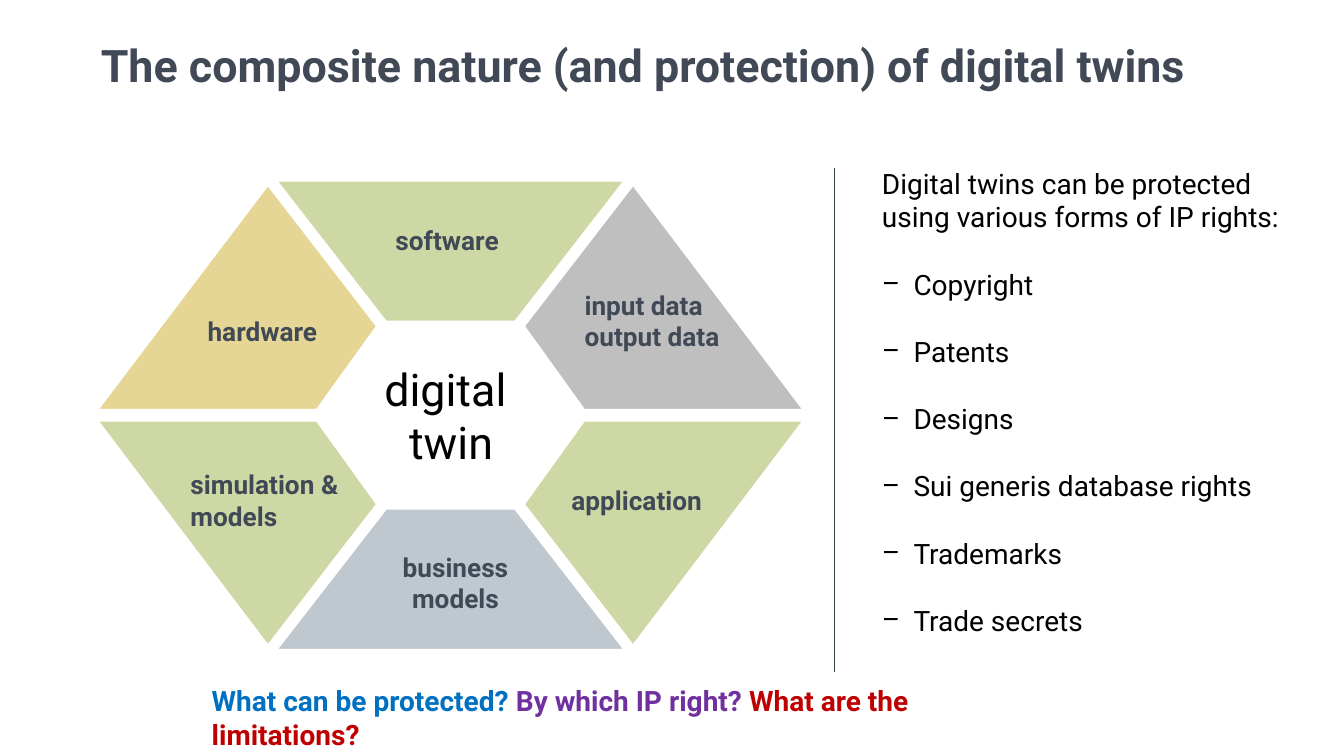
from dataclasses import dataclass

from lxml.etree import SubElement
from pptx import Presentation
from pptx.dml.color import RGBColor
from pptx.enum.shapes import MSO_CONNECTOR, MSO_SHAPE
from pptx.enum.text import MSO_ANCHOR, MSO_AUTO_SIZE, PP_ALIGN
from pptx.oxml.ns import qn
from pptx.util import Pt

FONT = "Roboto"
SLATE, BLACK, WHITE = "404955", "000000", "FFFFFF"
GREEN, SAND, GREY, STEEL = "CED8A4", "E6D695", "BFBFBF", "BFC8CE"
CENTRE_X, CENTRE_Y = 321.8, 296.6

# Outlines of the lower and lower-right segments, measured from the centre
TRAPEZOID = [(-46, 67), (46, 67), (124, 167.4), (-124, 167.4)]
WEDGE = [(95.6, 4), (52.7, 63.6), (130.4, 164.2), (251.8, 4)]


@dataclass
class Segment:
    lines: list[str]
    outline: list[tuple[float, float]]
    mirror: tuple[int, int]
    fill: str
    label_box: tuple[float, float, float, float]
    align: PP_ALIGN = PP_ALIGN.LEFT


@dataclass
class Question:
    text: str
    color: str


SEGMENTS = [
    Segment(["business", "models"], TRAPEZOID, (1, 1), STEEL,
            (271.4, 388.1, 108, 56.2), PP_ALIGN.CENTER),
    Segment(["software"], TRAPEZOID, (1, -1), GREEN,
            (236.9, 148.3, 164.9, 46.1), PP_ALIGN.CENTER),
    Segment(["hardware"], WEDGE, (-1, -1), SAND, (148.3, 191.5, 108, 89.3)),
    Segment(["simulation &", "models"], WEDGE, (-1, 1), GREEN,
            (136.1, 312.5, 126.7, 89.3)),
    Segment(["input data", "output data"], WEDGE, (1, -1), GREY,
            (417.6, 184.3, 108, 89.3)),
    Segment(["application"], WEDGE, (1, 1), GREEN, (408.2, 312.5, 126.7, 89.3)),
]
IP_RIGHTS = ["Copyright", "Patents", "Designs", "Sui generis database rights",
             "Trademarks", "Trade secrets"]
QUESTIONS = [
    Question("What can be protected? ", "0070C0"),
    Question("By which IP right? ", "7030A0"),
    Question("What are the limitations?", "C00000"),
]


def rgb(color: str) -> RGBColor:
    return RGBColor.from_string(color)


def place(shape, left: float, top: float, width: float, height: float) -> None:
    shape.left, shape.top = Pt(left), Pt(top)
    shape.width, shape.height = Pt(width), Pt(height)


def prepare_frame(shape, anchor: MSO_ANCHOR, inset: float = 0):
    frame = shape.text_frame
    frame.word_wrap = True
    frame.auto_size = MSO_AUTO_SIZE.NONE
    frame.vertical_anchor = anchor
    frame.margin_left = frame.margin_right = Pt(inset)
    frame.margin_top = frame.margin_bottom = Pt(inset)
    return frame


def add_run(paragraph, text: str, size: float, color: str, bold: bool = False) -> None:
    run = paragraph.add_run()
    run.text = text
    run.font.name, run.font.size, run.font.bold = FONT, Pt(size), bold
    run.font.color.rgb = rgb(color)


def add_lines(frame, lines: list[str], align: PP_ALIGN, size: float, color: str,
              bold: bool = False) -> None:
    for index, line in enumerate(lines):
        paragraph = frame.add_paragraph() if index else frame.paragraphs[0]
        paragraph.alignment = align
        add_run(paragraph, line, size, color, bold)


def paint(shape, fill: str) -> None:
    shape.shadow.inherit = False
    shape.fill.solid()
    shape.fill.fore_color.rgb = rgb(fill)
    shape.line.color.rgb = rgb(WHITE)
    shape.line.width = Pt(1)


def set_bullet(paragraph, bullet: str = "", indent: float = 0) -> None:
    properties = paragraph._p.get_or_add_pPr()
    properties.set("marL", str(Pt(indent)))
    properties.set("indent", str(-Pt(indent)))
    if bullet:
        SubElement(properties, qn("a:buFont"), typeface=FONT)
        SubElement(properties, qn("a:buChar"), char=bullet)
    else:
        SubElement(properties, qn("a:buNone"))


def draw_segment(shapes, segment: Segment) -> None:
    flip_x, flip_y = segment.mirror
    corners = [(Pt(CENTRE_X + flip_x * x), Pt(CENTRE_Y + flip_y * y))
               for x, y in segment.outline]
    builder = shapes.build_freeform(*corners[0])
    builder.add_line_segments(corners[1:], close=True)
    paint(builder.convert_to_shape(), segment.fill)


def draw_label(shapes, segment: Segment) -> None:
    label = shapes.add_textbox(*(Pt(length) for length in segment.label_box))
    frame = prepare_frame(label, MSO_ANCHOR.MIDDLE)
    add_lines(frame, segment.lines, segment.align, 18.7, SLATE, bold=True)


def draw_diagram(slide) -> None:
    shapes = slide.shapes.add_group_shape().shapes
    hub = shapes.add_shape(MSO_SHAPE.HEXAGON, Pt(234.7), Pt(239), Pt(175), Pt(115.2))
    hub.adjustments[0] = 0.415
    paint(hub, WHITE)
    frame = prepare_frame(hub, MSO_ANCHOR.MIDDLE, 5.8)
    add_lines(frame, ["digital ", "twin"], PP_ALIGN.CENTER, 32, BLACK)
    for segment in SEGMENTS:
        draw_segment(shapes, segment)
    for segment in SEGMENTS:
        draw_label(shapes, segment)


def draw_title(slide) -> None:
    title = slide.shapes.title
    place(title, 72, 28.1, 823.7, 42.5)
    frame = prepare_frame(title, MSO_ANCHOR.TOP)
    add_lines(frame, ["The composite nature (and protection) of digital twins"],
              PP_ALIGN.LEFT, 32, SLATE, bold=True)
    frame.paragraphs[0].line_spacing = Pt(37.3)


def draw_divider(slide) -> None:
    divider = slide.shapes.add_connector(
        MSO_CONNECTOR.STRAIGHT, Pt(596.2), Pt(120), Pt(596.2), Pt(480))
    divider.line.color.rgb = rgb("39454C")
    divider.line.width = Pt(0.75)
    SubElement(divider._element.spPr, qn("a:effectLst"))


def draw_rights(slide) -> None:
    body = slide.placeholders[1]
    place(body, 630, 118.8, 295.2, 360)
    frame = prepare_frame(body, MSO_ANCHOR.TOP)
    intro = "Digital twins can be protected using various forms of IP rights:"
    add_lines(frame, [intro, *IP_RIGHTS], PP_ALIGN.LEFT, 20, BLACK)
    for index, paragraph in enumerate(frame.paragraphs):
        paragraph.line_spacing = Pt(24)
        paragraph.space_before = Pt(24 if index else 0)
        paragraph.space_after = Pt(0)
        if index:
            set_bullet(paragraph, "–", 22.5)
        else:
            set_bullet(paragraph)


def draw_questions(slide) -> None:
    box = slide.shapes.add_textbox(Pt(151.2), Pt(488.2), Pt(580), Pt(48))
    paragraph = prepare_frame(box, MSO_ANCHOR.TOP).paragraphs[0]
    paragraph.line_spacing = Pt(24)
    for question in QUESTIONS:
        add_run(paragraph, question.text, 20, question.color, bold=True)


def main() -> None:
    presentation = Presentation()
    presentation.slide_width, presentation.slide_height = Pt(960), Pt(540)
    slide = presentation.slides.add_slide(presentation.slide_layouts[1])
    draw_title(slide)
    draw_diagram(slide)
    draw_divider(slide)
    draw_rights(slide)
    draw_questions(slide)
    presentation.save("out.pptx")


if __name__ == "__main__":
    main()
